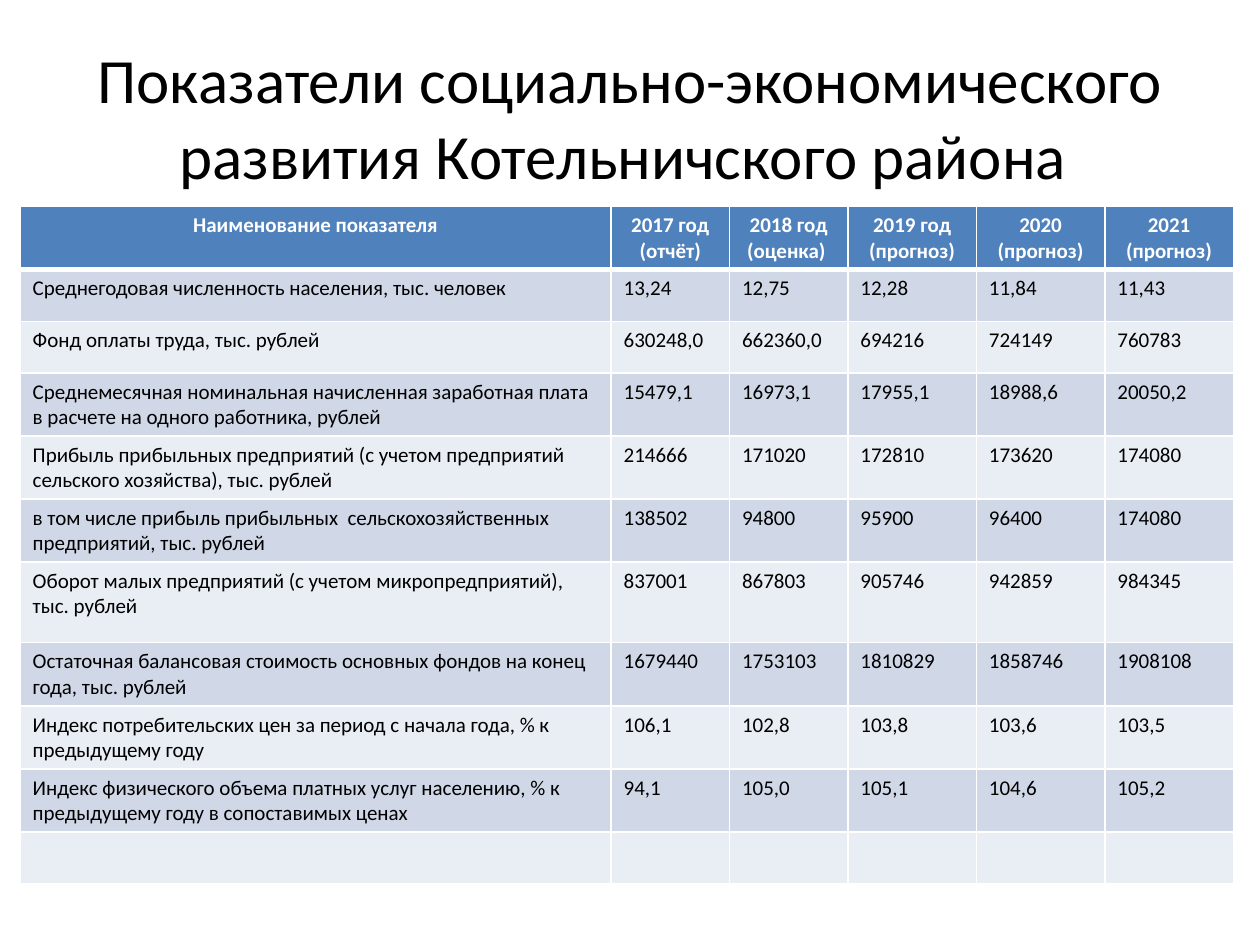
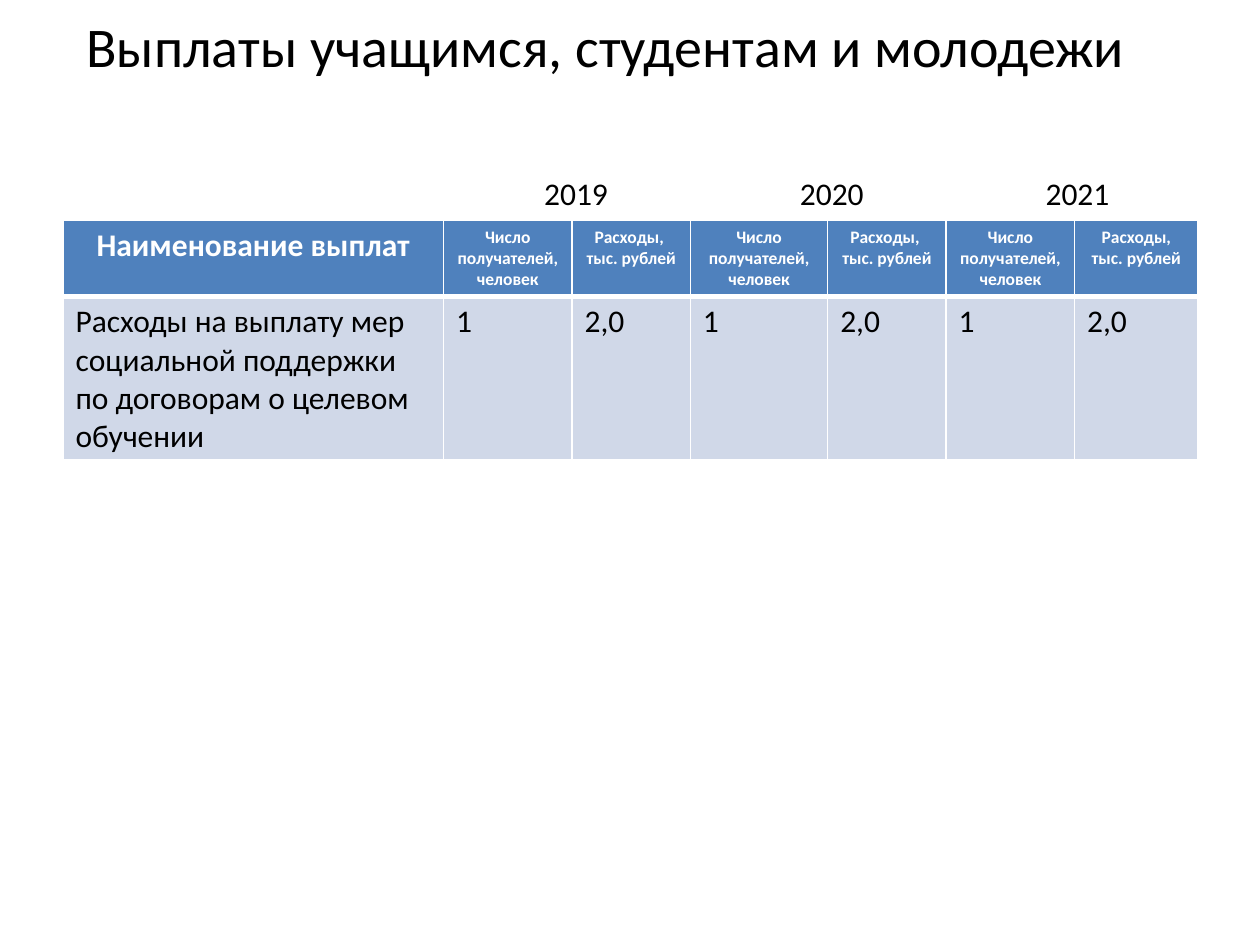
from dataclasses import dataclass

from lxml.etree import SubElement
from pptx import Presentation
from pptx.dml.color import RGBColor
from pptx.enum.text import MSO_ANCHOR as Anchor, PP_ALIGN as Align
from pptx.oxml.ns import qn
from pptx.util import Inches, Pt

INDICATORS = {
    "title": "Показатели социально-экономического развития Котельничского района ",
    "title_size": 36,
    "title_box": (0.5, 0.3, 9, 1.25),
    "table_at": (0.16, 1.64),
    "widths": [4.69, 0.94, 0.94, 1.02, 1.02, 1.02],
    "row_height": 0.41,
    "tall_rows": {6: 0.64},
    "header_sizes": [12] * 6,
    "body_size": 12,
    "header": ["Наименование показателя", "2017 год (отчёт)", "2018 год (оценка) ",
               "2019 год (прогноз)", "2020\n(прогноз)", "2021\n(прогноз)"],
    "body": [
        ["Среднегодовая численность населения, тыс. человек",
         "13,24", "12,75", "12,28", "11,84", "11,43"],
        ["Фонд оплаты труда, тыс. рублей",
         "630248,0", "662360,0", "694216", "724149", "760783"],
        ["Среднемесячная номинальная начисленная заработная плата в расчете на одного работника, рублей",
         "15479,1", "16973,1", "17955,1", "18988,6", "20050,2"],
        ["Прибыль прибыльных предприятий (с учетом предприятий сельского хозяйства), тыс. рублей",
         "214666", "171020", "172810", "173620", "174080"],
        ["в том числе прибыль прибыльных  сельскохозяйственных предприятий, тыс. рублей",
         "138502", "94800", "95900", "96400", "174080"],
        ["Оборот малых предприятий (с учетом микропредприятий), тыс. рублей",
         "837001", "867803", "905746", "942859", "984345"],
        ["Остаточная балансовая стоимость основных фондов на конец года, тыс. рублей",
         "1679440", "1753103", "1810829", "1858746", "1908108"],
        ["Индекс потребительских цен за период с начала года, % к предыдущему году",
         "106,1", "102,8", "103,8", "103,6", "103,5"],
        ["Индекс физического объема платных услуг населению, % к предыдущему году в сопоставимых ценах",
         "94,1", "105,0", "105,1", "104,6", "105,2"],
        [""] * 6,
    ],
}

RECIPIENTS = "Число получателей, человек"
SPENDING = "Расходы, \nтыс. рублей"
PAYMENTS = {
    "title": "Выплаты учащимся, студентам и молодежи",
    "title_size": 32,
    "title_box": (0.31, 0, 9, 0.72),
    "table_at": (0.5, 1.75),
    "widths": [3.02, 1.02, 0.94, 1.09, 0.94, 1.02, 0.98],
    "row_height": 0.41,
    "tall_rows": {},
    "header_sizes": [18] + [10] * 6,
    "body_size": 18,
    "header": ["Наименование выплат", RECIPIENTS, SPENDING, RECIPIENTS, SPENDING,
               RECIPIENTS, "Расходы,\nтыс. рублей"],
    "body": [["Расходы на выплату мер социальной поддержки по договорам о целевом обучении"]
             + ["1", "2,0"] * 3],
}
YEAR_LEFTS = {"2019": 4.22, "2020": 6.25, "2021": 8.2}
YEAR_TOP, YEAR_WIDTH, YEAR_HEIGHT = 1.33, 0.71, 0.4


@dataclass(frozen=True)
class Theme:
    font: str = "Calibri"
    ink: str = "000000"
    paper: str = "FFFFFF"
    header: str = "4F81BD"
    bands: tuple = ("D0D8E8", "E9EDF4")
    year_size: int = 18
    rule: int = 1
    header_rule: int = 3


THEME = Theme()


def write(frame, text, size, color=THEME.ink, bold=False, align=Align.LEFT):
    """Fill a text frame, one paragraph per line of text."""
    frame.text = text
    font_format = {"name": THEME.font, "size": Pt(size), "bold": bold}
    for paragraph in frame.paragraphs:
        paragraph.alignment = align
        for run in paragraph.runs:
            for attribute, value in font_format.items():
                setattr(run.font, attribute, value)
            run.font.color.rgb = RGBColor.from_string(color)


def add_text(slide, text, box, size, wrap=True, anchor=Anchor.TOP, align=Align.LEFT):
    frame = slide.shapes.add_textbox(*map(Inches, box)).text_frame
    frame.word_wrap = wrap
    frame.vertical_anchor = anchor
    write(frame, text, size, align=align)


def paint(cell, fill, edges):
    """Give a cell its borders (points by edge letter) and its fill."""
    properties = cell._tc.get_or_add_tcPr()
    for edge, width in edges.items():
        line = SubElement(properties, qn(f"a:ln{edge}"), w=str(Pt(width)))
        SubElement(SubElement(line, qn("a:solidFill")), qn("a:srgbClr"), val=THEME.paper)
    cell.fill.solid()
    cell.fill.fore_color.rgb = RGBColor.from_string(fill)


def add_rows(slide, content):
    rows = [content["header"]] + content["body"]
    widths = content["widths"]
    heights = [content["tall_rows"].get(r, content["row_height"]) for r in range(len(rows))]
    box = (*content["table_at"], sum(widths), sum(heights))
    table = slide.shapes.add_table(len(rows), len(widths), *map(Inches, box)).table
    table.horz_banding = False
    for column, width in zip(table.columns, widths):
        column.width = Inches(width)
    for r, (row, height) in enumerate(zip(rows, heights)):
        table.rows[r].height = Inches(height)
        for c, text in enumerate(row):
            cell = table.cell(r, c)
            edges = dict.fromkeys("LRTB", THEME.rule)
            if r == 0:
                edges["B"] = THEME.header_rule
                paint(cell, THEME.header, edges)
                write(cell.text_frame, text, content["header_sizes"][c],
                      THEME.paper, True, Align.CENTER)
            else:
                if r == 1:
                    edges["T"] = THEME.header_rule
                paint(cell, THEME.bands[(r - 1) % 2], edges)
                write(cell.text_frame, text, content["body_size"])


def add_table_slide(deck, content):
    slide = deck.slides.add_slide(deck.slide_layouts[6])
    add_text(slide, content["title"], content["title_box"], content["title_size"],
             anchor=Anchor.MIDDLE, align=Align.CENTER)
    add_rows(slide, content)
    return slide


def main():
    deck = Presentation()
    deck.slide_width, deck.slide_height = Inches(10), Inches(7.5)
    add_table_slide(deck, INDICATORS)
    payments = add_table_slide(deck, PAYMENTS)
    for year, left in YEAR_LEFTS.items():
        add_text(payments, year, (left, YEAR_TOP, YEAR_WIDTH, YEAR_HEIGHT),
                 THEME.year_size, wrap=False)
    deck.save("out.pptx")


if __name__ == "__main__":
    main()
